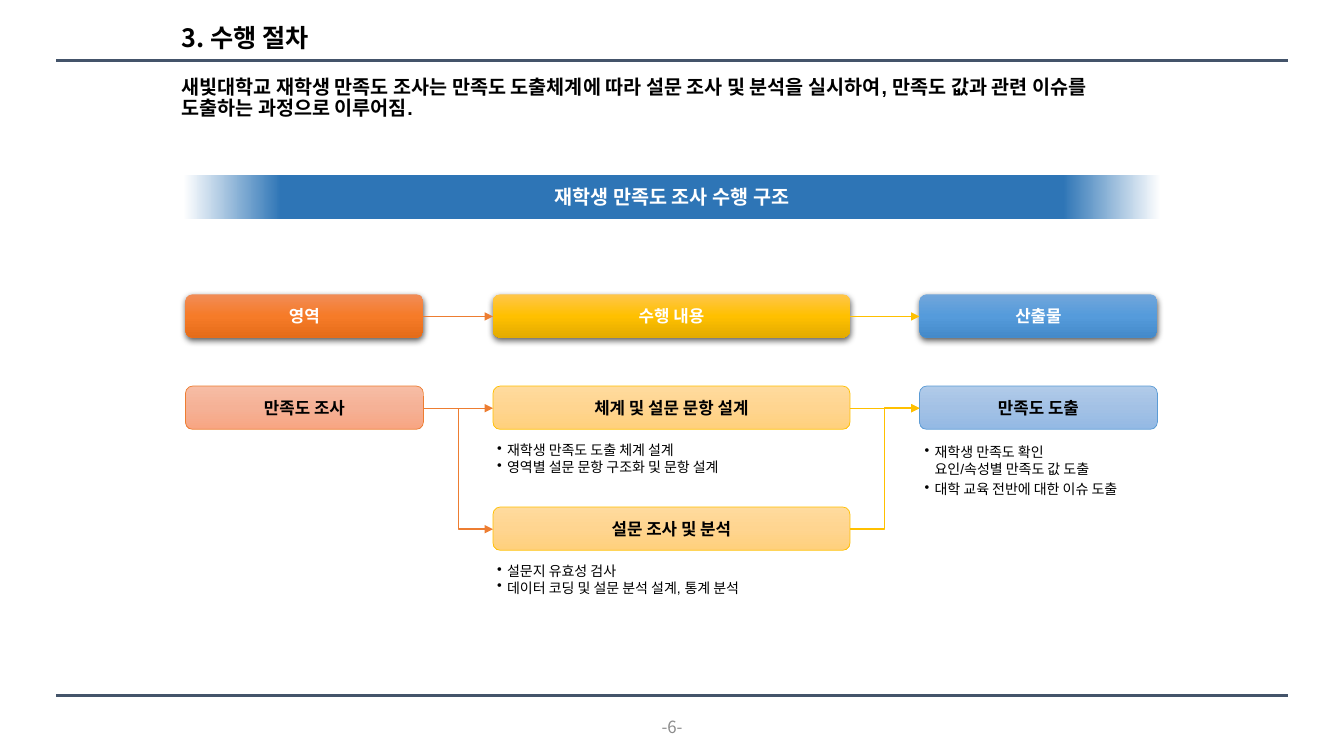
from pptx import Presentation
from pptx.dml.color import RGBColor
from pptx.enum.shapes import MSO_CONNECTOR, MSO_SHAPE
from pptx.enum.text import MSO_ANCHOR, MSO_AUTO_SIZE, PP_ALIGN
from pptx.oxml import parse_xml
from pptx.oxml.ns import nsdecls
from pptx.util import Pt
from lxml.etree import SubElement

PX = 9144  # 100 px to the inch
NOTO = "Noto Sans CJK KR"
COLORS = {
    "black": "000000", "white": "FFFFFF", "gray": "8C8C8C", "rule": "44546A",
    "banner": "2E75B6", "orange": "ED7D31", "yellow": "FFC000", "blue": "5B9BD5",
}
# Gradient stops per column, for the heading row and the step boxes
HEAD = {
    "orange": ["F18C57", "F67B28", "E56C19"],
    "yellow": ["FFC64B", "FFC000", "E3AB00"],
    "blue": ["71A6DB", "559BDB", "448ACA"],
}
STEP = {
    "orange": ["F7BDA5", "F5B196", "F8A582"],
    "yellow": ["FFDB9E", "FFD590", "FFD07C"],
    "blue": ["B1CBE9", "A3C1E5", "93B9E4"],
}
COLUMNS = {"orange": (184, 236), "yellow": (489, 354), "blue": (912, 236)}
HEAD_Y, STEP_Y, STEP2_Y, BOX_H = 292, 383, 503, 43


def px(*values):
    return [v * PX for v in values]


def qn_a(tag):
    return "{http://schemas.openxmlformats.org/drawingml/2006/main}" + tag


def write(sp, *paras, size=12, font=NOTO, color="black", bold=False,
          align=PP_ALIGN.LEFT, anchor=MSO_ANCHOR.TOP, spacing=None, before=0,
          bullet=False, wrap=True, insets=(10, 5, 10, 5)):
    tf = sp.text_frame
    tf.auto_size = MSO_AUTO_SIZE.NONE
    tf.word_wrap, tf.vertical_anchor = wrap, anchor
    (tf.margin_left, tf.margin_top,
     tf.margin_right, tf.margin_bottom) = px(*insets)
    for i, text in enumerate(paras):
        p = tf.add_paragraph() if i else tf.paragraphs[0]
        p.text, p.alignment = text, align
        p.space_before = Pt(before if i else 0)
        if spacing:
            p.line_spacing = spacing
        if bullet:
            pPr = p._p.get_or_add_pPr()
            pPr.set("marL", str(10 * PX))
            pPr.set("indent", str(-10 * PX))
            SubElement(pPr, qn_a("buChar"), char="•")
        for r in p.runs:
            r.font.size, r.font.bold, r.font.name = Pt(size), bold, font
            r.font.color.rgb = RGBColor.from_string(COLORS[color])
            SubElement(r._r.get_or_add_rPr(), qn_a("ea"), typeface=NOTO)


def text_box(s, box, *paras, **fmt):
    write(s.shapes.add_textbox(*px(*box)), *paras, **fmt)


def bullets(s, box, *paras, **fmt):
    text_box(s, box, *paras, size=10, font="Arial", bullet=True, **fmt)


def gradient_shape(s, kind, box, stops, angle, text, line=None, shadow=False, **fmt):
    sp = s.shapes.add_shape(kind, *px(*box))
    gs = "".join(f'<a:gs pos="{pos * 1000}"><a:srgbClr val="{c}"/></a:gs>'
                 for pos, c in stops)
    sp._element.spPr.append(parse_xml(
        f'<a:gradFill {nsdecls("a")} rotWithShape="1"><a:gsLst>{gs}</a:gsLst>'
        f'<a:lin ang="{angle * 60000}" scaled="0"/></a:gradFill>'))
    if line:
        sp.line.color.rgb = RGBColor.from_string(COLORS[line])
        sp.line.width = Pt(0.5)
    else:
        sp.line.fill.background()
    sp.shadow.inherit = False
    if shadow:
        effects = sp._element.spPr.find(qn_a("effectLst"))
        effects.append(parse_xml(
            f'<a:outerShdw {nsdecls("a")} blurRad="{Pt(4.5)}" dist="{Pt(1.5)}" '
            'dir="5400000" algn="ctr" rotWithShape="0"><a:srgbClr val="000000">'
            '<a:alpha val="63000"/></a:srgbClr></a:outerShdw>'))
    write(sp, text, bold=True, align=PP_ALIGN.CENTER, anchor=MSO_ANCHOR.MIDDLE, **fmt)


def box(s, column, y, text, heading=False):
    x, w = COLUMNS[column]
    stops = zip((0, 50, 100), (HEAD if heading else STEP)[column])
    gradient_shape(s, MSO_SHAPE.ROUNDED_RECTANGLE, (x, y, w, BOX_H), stops, 90, text,
                   line=None if heading else column, shadow=heading, wrap=False,
                   color="white" if heading else "black")


def connect(s, x1, y1, x2, y2, color, width=1, arrow=True):
    kind = MSO_CONNECTOR.STRAIGHT if y1 == y2 else MSO_CONNECTOR.ELBOW
    c = s.shapes.add_connector(kind, *px(x1, y1, x2, y2))
    c.line.color.rgb = RGBColor.from_string(COLORS[color])
    c.line.width = Pt(width)
    if arrow:
        SubElement(c.line._get_or_add_ln(), qn_a("tailEnd"), type="triangle")
    SubElement(c._element.spPr, qn_a("effectLst"))


def main():
    prs = Presentation()
    prs.slide_width, prs.slide_height = px(1333, 750)
    s = prs.slides.add_slide(prs.slide_layouts[5])

    # Frame rules, title, lead and page number
    for y in (60, 690):
        connect(s, 56, y, 1277, y, "rule", width=2, arrow=False)
    title = s.shapes.title
    title.left, title.top, title.width, title.height = px(170, 21, 160, 37)
    write(title, "3. 수행 절차", size=18, bold=True, spacing=0.9,
          anchor=MSO_ANCHOR.MIDDLE, wrap=False)
    text_box(s, (170, 72, 992, 53),
             "새빛대학교 재학생 만족도 조사는 만족도 도출체계에 따라 설문 조사 및 분석을 "
             "실시하여, 만족도 값과 관련 이슈를 도출하는 과정으로 이루어짐.",
             size=14, font="Arial", bold=True, spacing=0.9)
    text_box(s, (639, 706, 55, 30), "-6-", color="gray", wrap=False,
             align=PP_ALIGN.CENTER, anchor=MSO_ANCHOR.MIDDLE)

    # Banner fading out at both ends
    fade = [(0, COLORS["white"]), (10, COLORS["banner"]),
            (90, COLORS["banner"]), (100, COLORS["white"])]
    gradient_shape(s, MSO_SHAPE.RECTANGLE, (182, 174, 969, 43), fade, 0,
                   "재학생 만족도 조사 수행 구조", size=14, font="Arial", color="white")

    # Column headings and steps
    for column, heading, step in (("orange", "영역", "만족도 조사"),
                                  ("yellow", "수행 내용", "체계 및 설문 문항 설계"),
                                  ("blue", "산출물", "만족도 도출")):
        box(s, column, HEAD_Y, heading, heading=True)
        box(s, column, STEP_Y, step)
    box(s, "yellow", STEP2_Y, "설문 조사 및 분석")

    # Details under the steps
    x, w = COLUMNS["yellow"]
    for y, lines in ((STEP_Y, ("재학생 만족도 도출 체계 설계",
                               "영역별 설문 문항 구조화 및 문항 설계")),
                     (STEP2_Y, ("설문지 유효성 검사",
                                "데이터 코딩 및 설문 분석 설계, 통계 분석"))):
        bullets(s, (x, y + BOX_H, w, 53), *lines, insets=(4, 12, 4, 4))
    bullets(s, (913, 436, 236, 63), "재학생 만족도 확인\v요인/속성별 만족도 값 도출",
            "대학 교육 전반에 대한 이슈 도출", before=2.5, insets=(4, 4, 4, 4))

    # Arrows between the columns
    head_mid, step_mid, step2_mid = (y + BOX_H // 2 + 1
                                     for y in (HEAD_Y, STEP_Y, STEP2_Y))
    for left, right, y1, y2 in (("orange", "yellow", step_mid, step2_mid),
                                ("yellow", "blue", step2_mid, step_mid)):
        x1, x2 = sum(COLUMNS[left]), COLUMNS[right][0]
        for start, end in ((y1, y2), (head_mid, head_mid), (step_mid, step_mid)):
            connect(s, x1, start, x2, end, left)

    prs.save("out.pptx")


if __name__ == "__main__":
    main()
